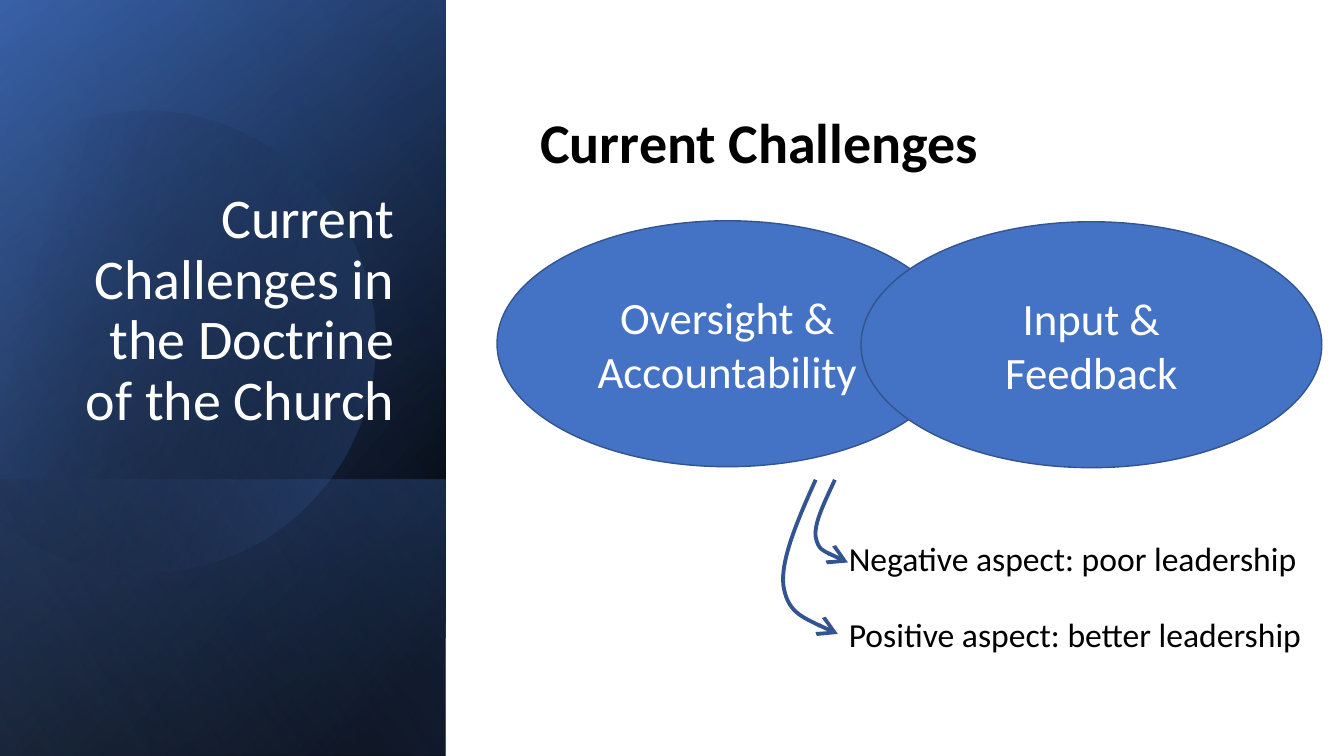
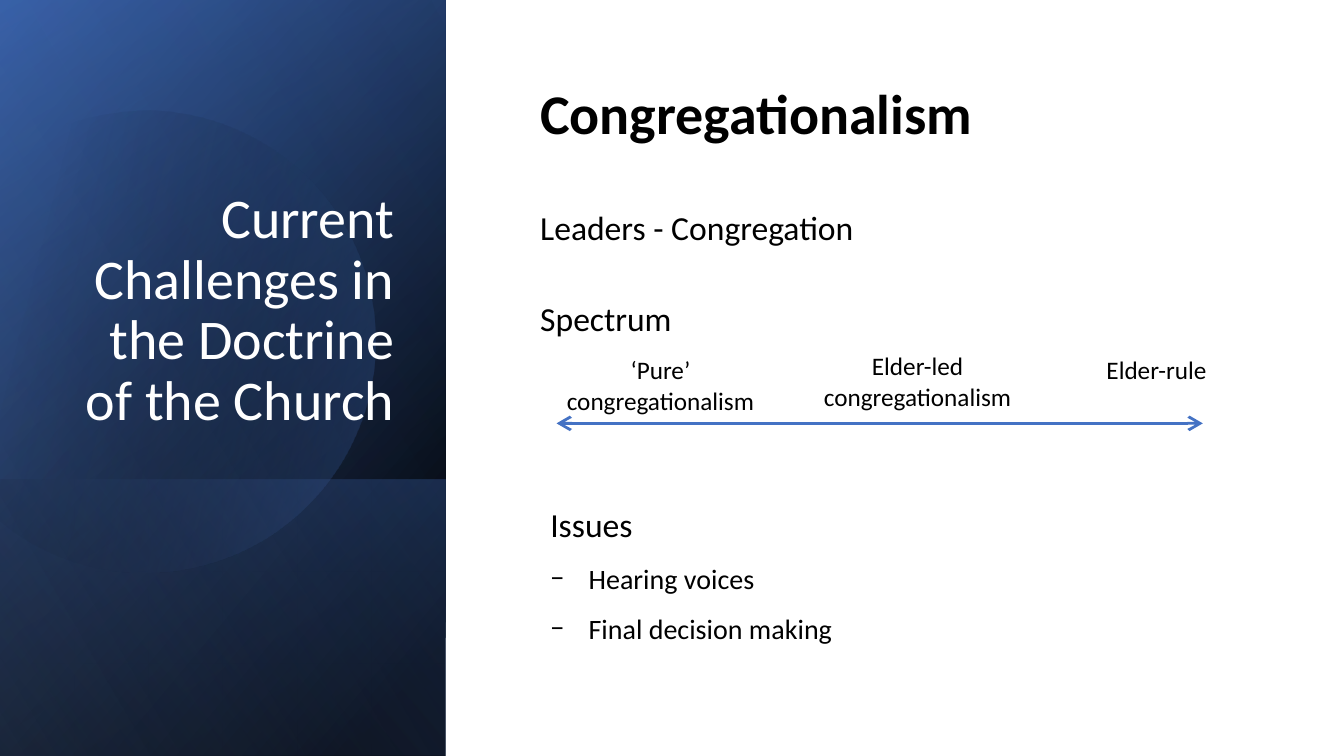
from dataclasses import dataclass

from lxml.etree import SubElement
from pptx import Presentation
from pptx.dml.color import RGBColor
from pptx.enum.shapes import MSO_CONNECTOR as Connector, MSO_SHAPE as Preset
from pptx.enum.text import MSO_ANCHOR as Anchor, PP_ALIGN as Align
from pptx.oxml.ns import qn
from pptx.util import Pt

EMU_PER_PX = 9144
TITLE_ONLY = 5


@dataclass(frozen=True)
class Theme:
    font: str = "Calibri"
    white: str = "FFFFFF"
    black: str = "000000"
    blue: str = "4472C4"
    edge: str = "325491"
    navy: str = "2F5597"
    pale: str = "8FAADC"
    heading: int = 40
    oval: int = 32
    body: int = 24
    bullet: int = 20
    label: int = 18


@dataclass(frozen=True)
class Box:
    left: int
    top: int
    width: int
    height: int

    def inside(self, left, top, width, height):
        return Box(self.left + left, self.top + top, width, height)

    def point(self, x, y):
        return px(self.left + x), px(self.top + y)

    def emu(self):
        return [px(n) for n in (self.left, self.top, self.width, self.height)]


THEME = Theme()
PAGE = Box(0, 0, 1333, 750)
PANEL = Box(0, 0, 442, 750)
PANEL_TITLE = "Current Challenges in the Doctrine of the Church"
CIRCLE_START = (212, 116)
CIRCLE_SEGMENTS = [
    [(304, 145), (372, 232), (372, 334)],
    [(372, 461), (269, 563), (143, 563)],
    [(64, 563), (-6, 523), (-46, 462)],
    [(-55, 448)],
    [(36, 133)],
    [(54, 124)],
    [(82, 112), (112, 106), (143, 106)],
    [(167, 106), (190, 110), CIRCLE_START],
]


def px(length):
    return round(length * EMU_PER_PX)


def rgb(color):
    return RGBColor.from_string(color)


def style_para(para, size, color=THEME.black, bold=False, align=Align.LEFT):
    para.alignment = align
    font = para.font
    font.name, font.size, font.bold = THEME.font, Pt(size), bold
    font.color.rgb = rgb(color)


def add_text(page, box, text, size, **style):
    shape = page.shapes.add_textbox(*box.emu())
    frame = shape.text_frame
    frame.word_wrap = True
    para = frame.paragraphs[0]
    para.text = text
    style_para(para, size, **style)
    return frame


def add_preset(page, preset, box, color):
    shape = page.shapes.add_shape(preset, *box.emu())
    shape.shadow.inherit = False
    shape.fill.solid()
    shape.fill.fore_color.rgb = rgb(color)
    shape.line.fill.background()
    return shape


def fade(shape, stops, angle):
    shape.line.fill.background()
    shape.fill.gradient()
    shape.fill.gradient_angle = 360 - angle
    for stop, (position, color, _) in zip(shape.fill.gradient_stops, stops):
        stop.position = position / 100
        stop.color.rgb = rgb(color)
    colors = list(shape.element.spPr.iter(qn("a:srgbClr")))
    for node, (_, _, opacity) in zip(colors, stops):
        if opacity < 100:
            SubElement(node, qn("a:alpha")).set("val", str(opacity * 1000))


def style_line(shape, color, width, ends=()):
    shape.line.color.rgb = rgb(color)
    shape.line.width = Pt(width)
    line = shape.element.spPr.find(qn("a:ln"))
    for end in ends:
        head = SubElement(line, qn(end))
        for key, value in (("type", "arrow"), ("w", "lg"), ("len", "lg")):
            head.set(key, value)


def add_curve(page, box, start, segments, close=False):
    builder = page.shapes.build_freeform(*box.point(*start), scale=1.0)
    builder.add_line_segments([box.point(*seg[-1]) for seg in segments], close=close)
    shape = builder.convert_to_shape()
    shape.shadow.inherit = False
    lines = list(shape.element.spPr.iter(qn("a:lnTo")))
    for line, segment in zip(lines, segments):
        if len(segment) == 3:
            curve = line.makeelement(qn("a:cubicBezTo"), {})
            for corner in segment:
                x, y = box.point(*corner)
                point = SubElement(curve, qn("a:pt"))
                point.set("x", str(x - shape.left))
                point.set("y", str(y - shape.top))
            line.getparent().replace(line, curve)
    return shape


def add_fade_band(page, box, stops, angle):
    left = box.left + (box.width - box.height) // 2
    top = box.top + (box.height - box.width) // 2
    band = add_preset(page, Preset.RECTANGLE, Box(left, top, box.height, box.width), THEME.blue)
    band.rotation = 90
    band.element.spPr.xfrm.set("flipH", "1")
    fade(band, stops, angle)


def add_panel(page, box):
    foot = box.inside(0, 476, box.width, 274)
    add_fade_band(page, box, [(8, THEME.black, 100), (100, THEME.navy, 100)], 50)
    add_fade_band(page, box, [(0, THEME.black, 0), (99, THEME.blue, 46)], 30)
    add_fade_band(page, foot, [(2, THEME.blue, 29), (100, THEME.black, 30)], 130)
    circle = add_curve(page, box, CIRCLE_START, CIRCLE_SEGMENTS, close=True)
    circle.rotation = 343.9
    fade(circle, [(29, THEME.black, 0), (100, THEME.blue, 43)], 30)
    add_fade_band(page, box, [(0, THEME.black, 0), (99, THEME.pale, 11)], 120)


def place_title(page, box):
    title = page.shapes.title
    title.left, title.top, title.width, title.height = box.emu()
    frame = title.text_frame
    frame.text = PANEL_TITLE
    frame.vertical_anchor = Anchor.BOTTOM
    para = frame.paragraphs[0]
    para.line_spacing = 0.9
    style_para(para, THEME.heading, THEME.white, align=Align.RIGHT)
    tree = page.shapes.element
    tree.remove(title.element)
    tree.append(title.element)


def add_heading(page, box, text):
    frame = add_text(page, box, text, THEME.heading, bold=True)
    frame.vertical_anchor = Anchor.MIDDLE
    frame.paragraphs[0].line_spacing = 0.9
    frame.paragraphs[0].space_before = Pt(10)


def add_page(deck, heading, heading_top):
    page = deck.slides.add_slide(deck.slide_layouts[TITLE_ONLY])
    add_preset(page, Preset.RECTANGLE, PAGE, THEME.white)
    add_panel(page, PANEL)
    place_title(page, PANEL.inside(51, 64, 350, 370))
    add_heading(page, Box(526, heading_top, 717, 88), heading)
    return page


def add_ovals(page, box, labels):
    width, height = 457, 244
    for index, label in enumerate(labels):
        place = box.inside(index * (box.width - width), index, width, height)
        oval = add_preset(page, Preset.OVAL, place, THEME.blue)
        style_line(oval, THEME.edge, 1)
        frame = oval.text_frame
        frame.word_wrap = True
        frame.vertical_anchor = Anchor.MIDDLE
        frame.text = label
        style_para(frame.paragraphs[0], THEME.oval, THEME.white, align=Align.CENTER)


def add_aspects(page, box):
    aspects = [
        ("Negative aspect: poor leadership", 53, (51, 0),
         [[(41, 22), (30, 43), (32, 57)], [(35, 70), (49, 76), (64, 82)]]),
        ("Positive aspect: better leadership", 128, (32, 0),
         [[(14, 40), (-3, 80), (0, 105)], [(4, 131), (29, 142), (54, 153)]]),
    ]
    for text, top, start, curves in aspects:
        add_text(page, box.inside(55, top, box.width - 55, 50), text, THEME.body)
        arrow = add_curve(page, box, start, curves)
        arrow.fill.background()
        style_line(arrow, THEME.edge, 2.75, ["a:tailEnd"])


def add_spectrum(page, box):
    add_text(page, box.inside(0, 0, 693, 50), "Spectrum", THEME.body)
    ends = box.point(26, 129) + box.point(667, 129)
    axis = page.shapes.add_connector(Connector.STRAIGHT, *ends)
    style_line(axis, THEME.blue, 2, ["a:headEnd", "a:tailEnd"])
    SubElement(axis.element.spPr, qn("a:effectLst"))
    labels = [
        ("‘Pure’ congregationalism", 13, 56, 232, 71),
        ("Elder-led congregationalism", 278, 52, 212, 71),
        ("Elder-rule", 515, 56, 212, 40),
    ]
    for text, *place in labels:
        add_text(page, box.inside(*place), text, THEME.label, align=Align.CENTER)


def add_issues(page, box, heading, issues):
    frame = add_text(page, box, heading, THEME.body)
    for issue in issues:
        para = frame.add_paragraph()
        para.text = issue
        para.line_spacing = 1.5
        style_para(para, THEME.bullet)
        props = para._p.get_or_add_pPr()
        props.set("marL", str(px(38)))
        props.set("indent", str(-px(38)))
        defaults = props.find(qn("a:defRPr"))
        for tag, key, value in (("a:buFont", "typeface", THEME.font), ("a:buChar", "char", "−")):
            defaults.addprevious(props.makeelement(qn(tag), {key: value}))


def build_challenges(deck):
    page = add_page(deck, "Current Challenges", 100)
    add_ovals(page, Box(493, 219, 818, 245), ["Oversight & Accountability", "Input & Feedback"])
    add_aspects(page, Box(777, 476, 556, 178))


def build_congregationalism(deck):
    page = add_page(deck, "Congregationalism", 71)
    add_text(page, Box(526, 200, 693, 50), "Leaders - Congregation", THEME.body)
    add_spectrum(page, Box(526, 291, 727, 135))
    add_issues(page, Box(536, 495, 693, 146), "Issues", ["Hearing voices", "Final decision making"])


def main():
    deck = Presentation()
    deck.slide_width, deck.slide_height = px(PAGE.width), px(PAGE.height)
    build_challenges(deck)
    build_congregationalism(deck)
    deck.save("out.pptx")


if __name__ == "__main__":
    main()
